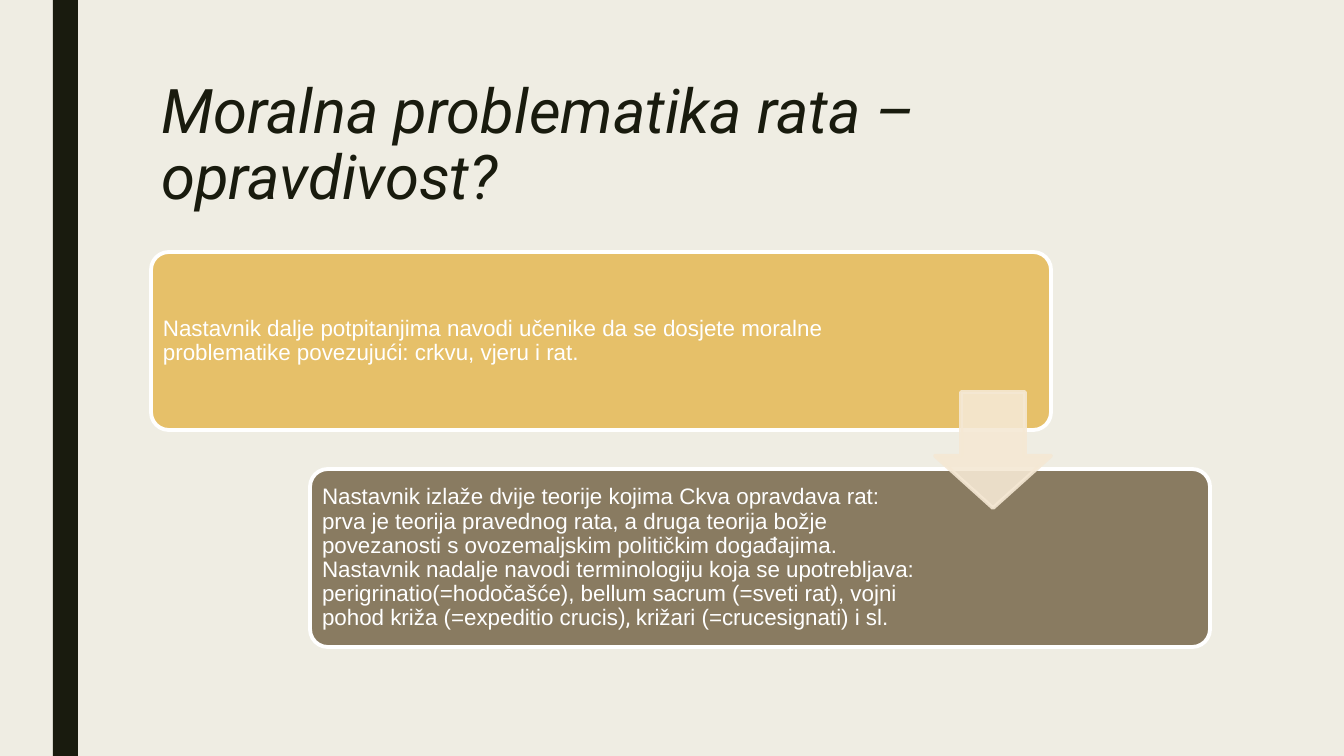
"""Builds a slide on the moral problem of war with two steps and an arrow."""
import pptx
import pptx.util
import pptx.dml.color
import pptx.enum.shapes
import pptx.enum.text
import lxml.etree

SCALE = 914400 / 100.8
INK = {"page": "EFEDE3", "dark": "191B0E", "gold": "E6C069",
       "brown": "897B61", "cream": "F5E8D4", "white": "FFFFFF"}
KIND = pptx.enum.shapes.MSO_SHAPE
ANCHOR = pptx.enum.text.MSO_ANCHOR
A = "{http://schemas.openxmlformats.org/drawingml/2006/main}"


def px(*sizes):
    return [pptx.util.Emu(round(size * SCALE)) for size in sizes]


def write(frame, text, size=16, font="Arial", color="white", slant=False,
          space=0.9, inset=7, anchor=ANCHOR.MIDDLE):
    """Text is a string or a list of (string, font) pairs."""
    frame.word_wrap = True
    frame.auto_size = pptx.enum.text.MSO_AUTO_SIZE.NONE
    frame.vertical_anchor = anchor
    frame.margin_left, frame.margin_right = px(inset, inset)
    frame.margin_top, frame.margin_bottom = px(inset, inset)
    para = frame.paragraphs[0]
    para.alignment = pptx.enum.text.PP_ALIGN.LEFT
    para.line_spacing = space
    for part, face in [(text, font)] if isinstance(text, str) else text:
        run = para.add_run()
        run.text = part
        run.font.name = face
        run.font.size = pptx.util.Pt(size)
        run.font.italic = slant
        run.font.color.rgb = pptx.dml.color.RGBColor.from_string(INK[color])


deck = pptx.Presentation()
deck.slide_width, deck.slide_height = px(1344, 756)
slide = deck.slides.add_slide(deck.slide_layouts[5])
slide.background.fill.solid()
slide.background.fill.fore_color.rgb = pptx.dml.color.RGBColor.from_string(INK["page"])

title = slide.shapes.title
title.left, title.top, title.width, title.height = px(151, 76, 1058, 163)
write(title.text_frame, "Moralna problematika rata – opravdivost?", size=44,
      font="Roboto", color="dark", slant=True, space=0.89, inset=10,
      anchor=ANCHOR.TOP)
title.text_frame.margin_top = px(5)[0]

first = "Nastavnik dalje potpitanjima navodi učenike da se dosjete moralne problematike povezujući: crkvu, vjeru i rat."
second = [
    ("Nastavnik izlaže dvije teorije kojima Ckva opravdava rat: prva je teorija pravednog rata, "
     "a druga teorija božje povezanosti s ovozemaljskim političkim događajima. "
     "Nastavnik nadalje navodi terminologiju koja se upotrebljava: perigrinatio(=hodočašće), "
     "bellum sacrum (=sveti rat), vojni pohod križa (=expeditio crucis", "Arial"),
    ("), ", "Roboto"),
    ("križari (=crucesignati) i sl.", "Arial"),
]

shapes = [
    (KIND.RECTANGLE, (53, 0, 25, 756), "dark", None, [], None, 0),
    (KIND.ROUNDED_RECTANGLE, (151, 252, 900, 178), "gold", "white", [0.1], first, 716),
    (KIND.ROUNDED_RECTANGLE, (310, 469, 900, 178), "brown", "white", [0.1], second, 615),
    (KIND.DOWN_ARROW, (935, 392, 116, 116), "cream", "cream", [0.55, 0.45], None, 0),
]
for kind, place, fill, line, bends, text, width in shapes:
    shape = slide.shapes.add_shape(kind, *px(*place))
    shape.shadow.inherit = False
    shape.fill.solid()
    shape.fill.fore_color.rgb = pptx.dml.color.RGBColor.from_string(INK[fill])
    for spot, bend in enumerate(bends):
        shape.adjustments[spot] = bend
    if line:
        shape.line.color.rgb = pptx.dml.color.RGBColor.from_string(INK[line])
        shape.line.width = pptx.util.Pt(2.75)
    else:
        shape.line.fill.background()
    if kind == KIND.DOWN_ARROW:
        for tint in shape.element.spPr.iter(A + "srgbClr"):
            lxml.etree.SubElement(tint, A + "alpha", val="90000")
    if text:
        left, top = place[:2]
        box = slide.shapes.add_textbox(*px(left + 5, top + 5, width, 168))
        write(box.text_frame, text)

deck.save("out.pptx")
